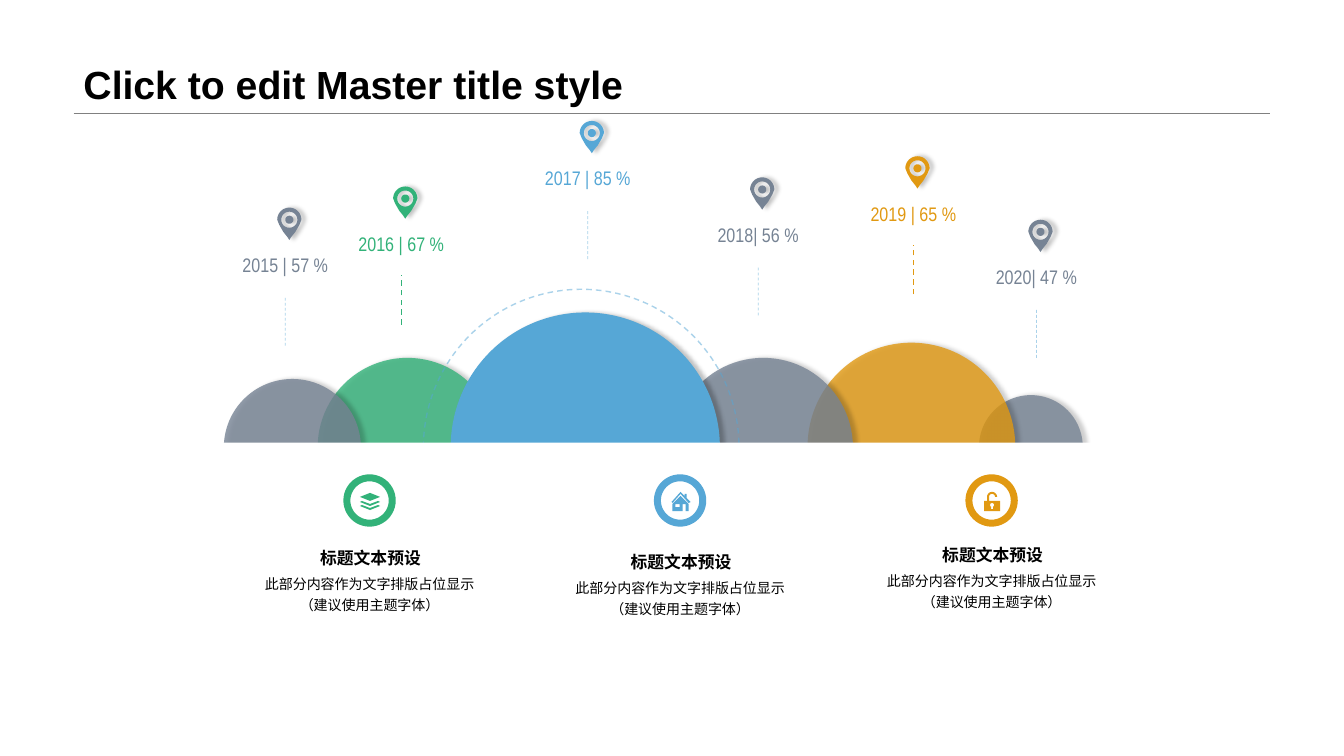
from math import cos, radians, sin

from pptx import Presentation
from pptx.dml.color import RGBColor
from pptx.enum.dml import MSO_LINE
from pptx.enum.shapes import MSO_CONNECTOR, MSO_SHAPE
from pptx.enum.text import MSO_ANCHOR, PP_ALIGN
from pptx.oxml import parse_xml
from pptx.oxml.ns import nsdecls, qn
from pptx.util import Inches, Pt

BLACK = RGBColor(0, 0, 0)
WHITE = RGBColor(255, 255, 255)
RULE = RGBColor(0x80, 0x80, 0x80)
SLATE = RGBColor(0x76, 0x83, 0x94)
GREEN = RGBColor(0x32, 0xB2, 0x79)
BLUE = RGBColor(0x56, 0xA7, 0xD6)
AMBER = RGBColor(0xE1, 0x99, 0x12)

HILLS = [(9.71, 3.92, 1.03, SLATE), (8.01, 3.4, 2.06, AMBER), (6.68, 3.55, 1.78, SLATE),
         (3.15, 3.55, 1.78, GREEN), (2.22, 3.76, 1.36, SLATE)]
MARKERS = [(9.68, 2.18, "2020| 47 %", SLATE), (8.46, 1.55, "2019 | 65 %", AMBER),
           (6.92, 1.76, "2018| 56 %", SLATE), (5.23, 1.2, "2017 | 85 %", BLUE),
           (3.38, 1.85, "2016 | 67 %", GREEN), (2.23, 2.06, "2015 | 57 %", SLATE)]


def arc(cx, cy, radius, start=0, end=360, steps=24):
    angles = [radians(start + (end - start) * i / steps) for i in range(steps + 1)]
    return [(cx + radius * cos(a), cy + radius * sin(a)) for a in angles]


PIN = [arc(0.12, 0.12, 0.12, 180, 360)
       + [(0.22, 0.17), (0.18, 0.24), (0.14, 0.29), (0.12, 0.32),
          (0.1, 0.29), (0.06, 0.24), (0.02, 0.17)],
       arc(0.12, 0.12, 0.08), arc(0.12, 0.12, 0.04)]
LAYER = [(-0.08, 0), (0, 0.03), (0.08, 0), (0.1, 0.01), (0, 0.05), (-0.1, 0.01)]
LAYERS = [[(0, -0.08), (0.1, -0.04), (0, 0), (-0.1, -0.04)],
          LAYER, [(x, y + 0.04) for x, y in LAYER]]
HOUSE = [[(-0.09, 0.01), (0, -0.09), (0.04, -0.05), (0.04, -0.07), (0.06, -0.07),
          (0.06, -0.03), (0.1, 0.01), (0.08, 0.02), (0, -0.07), (-0.08, 0.02)],
         [(0, -0.05), (0.08, 0.03), (0.08, 0.1), (0.05, 0.1), (0.05, 0.03),
          (0.02, 0.03), (0.02, 0.1), (-0.08, 0.1), (-0.08, 0.03)],
         [(-0.05, 0.03), (-0.01, 0.03), (-0.01, 0.06), (-0.05, 0.06)]]
PADLOCK = [[(-0.08, 0), (0.08, 0), (0.08, 0.1), (-0.08, 0.1)],
           [(-0.05, 0)] + arc(0, -0.04, 0.05, 180, 360)
           + arc(0, -0.04, 0.03, 360, 180) + [(-0.03, 0)],
           arc(0, 0.04, 0.02, 120, 420) + [(0.01, 0.08), (-0.01, 0.08)]]
COLUMNS = [(2.51, 5.38, GREEN, LAYERS), (5.59, 5.42, BLUE, HOUSE), (8.68, 5.35, AMBER, PADLOCK)]


def set_alpha(color_format, percent):
    color = color_format._xFill.find(qn("a:srgbClr"))
    color.append(parse_xml(f'<a:alpha {nsdecls("a")} val="{percent * 1000}"/>'))


def add_shadow(sp):
    effects = sp._element.spPr.find(qn("a:effectLst"))
    effects.append(parse_xml(
        f'<a:outerShdw {nsdecls("a")} blurRad="38100" dist="38100" dir="0" algn="l" '
        'rotWithShape="0"><a:srgbClr val="000000"><a:alpha val="23000"/>'
        '</a:srgbClr></a:outerShdw>'))


def style(sp, fill, line=None, width=1):
    sp.shadow.inherit = False
    if fill is None:
        sp.fill.background()
    else:
        sp.fill.solid()
        sp.fill.fore_color.rgb = fill
    if line is None:
        sp.line.fill.background()
    else:
        sp.line.color.rgb = line
        sp.line.width = Pt(width)
    return sp


def add_preset(s, kind, box, fill, line=None, width=1):
    return style(s.shapes.add_shape(kind, *map(Inches, box)), fill, line, width)


def add_outline(s, x, y, contours, fill):
    placed = [[(Inches(x + px), Inches(y + py)) for px, py in c] for c in contours]
    builder = s.shapes.build_freeform(*placed[0][0], scale=1.0)
    for i, contour in enumerate(placed):
        if i:
            builder.move_to(*contour[0])
        builder.add_line_segments(contour[1:], close=True)
    return style(builder.convert_to_shape(), fill)


def add_line(s, start, end, color, width):
    line = s.shapes.add_connector(MSO_CONNECTOR.STRAIGHT, *map(Inches, start + end))
    line.line.color.rgb = color
    line.line.width = Pt(width)
    line._element.spPr.append(parse_xml(f'<a:effectLst {nsdecls("a")}/>'))
    return line


def add_text(s, box, text, size, color=BLACK, font="Arial", bold=False, wrap=True,
             align=PP_ALIGN.CENTER, spacing=1.0, anchor=MSO_ANCHOR.TOP, inset=True):
    tf = s.shapes.add_textbox(*map(Inches, box)).text_frame
    tf.word_wrap = wrap
    tf.vertical_anchor = anchor
    if not inset:
        tf.margin_left = tf.margin_top = tf.margin_right = tf.margin_bottom = 0
    p = tf.paragraphs[0]
    p.text = text
    p.alignment = align
    p.line_spacing = spacing
    for r in p.runs:
        r.font.size = Pt(size)
        r.font.name = font
        r.font.bold = bold
        r.font.color.rgb = color


def add_title(s, x, y, w, h):
    add_line(s, (x, y + h), (x + w, y + h), RULE, 0.25)
    add_text(s, (x, y, w, h), "Click to edit Master title style", 28, bold=True,
             align=PP_ALIGN.LEFT, spacing=0.9, anchor=MSO_ANCHOR.BOTTOM)


def add_hill(s, x, y, size, color, alpha=None):
    hill = add_preset(s, MSO_SHAPE.OVAL, (x, y, size, size), color)
    if alpha:
        set_alpha(hill.fill._xPr.find(qn("a:solidFill")) is not None
                  and hill.fill.fore_color, alpha)
    add_shadow(hill)


def add_marker(s, x, y, label, color):
    strong = color in (GREEN, AMBER)
    stem = add_line(s, (x + 0.6, y + 1.37), (x + 0.6, y + 0.88),
                    color if strong else BLUE, 1 if strong else 0.5)
    stem.line.dash_style = MSO_LINE.DASH
    if not strong:
        set_alpha(stem.line.color, 50)
    add_text(s, (x, y + 0.4, 1.2, 0.34), label, 14, color, "Arial Narrow")
    add_shadow(add_outline(s, x + 0.52, y, PIN, color))


def add_column(s, x, y, color, icon):
    add_preset(s, MSO_SHAPE.OVAL, (x + 0.93, 4.74, 0.45, 0.45), WHITE, color, 5)
    add_outline(s, x + 1.16, 4.97, icon, color)
    add_text(s, (x - 0.14, y, 2.61, 0.35), "标题文本预设", 12, bold=True, wrap=False)
    add_text(s, (x, y + 0.3, 2.31, 0.65), "此部分内容作为文字排版占位显示\n（建议使用主题字体）",
             10, spacing=1.2, inset=False)


def add_landscape(s):
    for hill in HILLS:
        add_hill(s, *hill, alpha=80)
    for marker in MARKERS:
        add_marker(s, *marker)
    halo = add_preset(s, MSO_SHAPE.OVAL, (4.2, 2.87, 3.13, 3.13), None, BLUE)
    halo.line.dash_style = MSO_LINE.DASH
    set_alpha(halo.line.color, 50)
    add_hill(s, 4.47, 3.1, 2.67, BLUE)
    add_preset(s, MSO_SHAPE.RECTANGLE, (0, 4.39, 13.33, 3.08), WHITE)


def main():
    prs = Presentation()
    prs.slide_width, prs.slide_height = Inches(13.33), Inches(7.5)
    s = prs.slides.add_slide(prs.slide_layouts[6])
    add_title(s, 0.73, 0, 11.87, 1.12)
    add_landscape(s)
    for column in COLUMNS:
        add_column(s, *column)
    prs.save("out.pptx")


if __name__ == "__main__":
    main()
